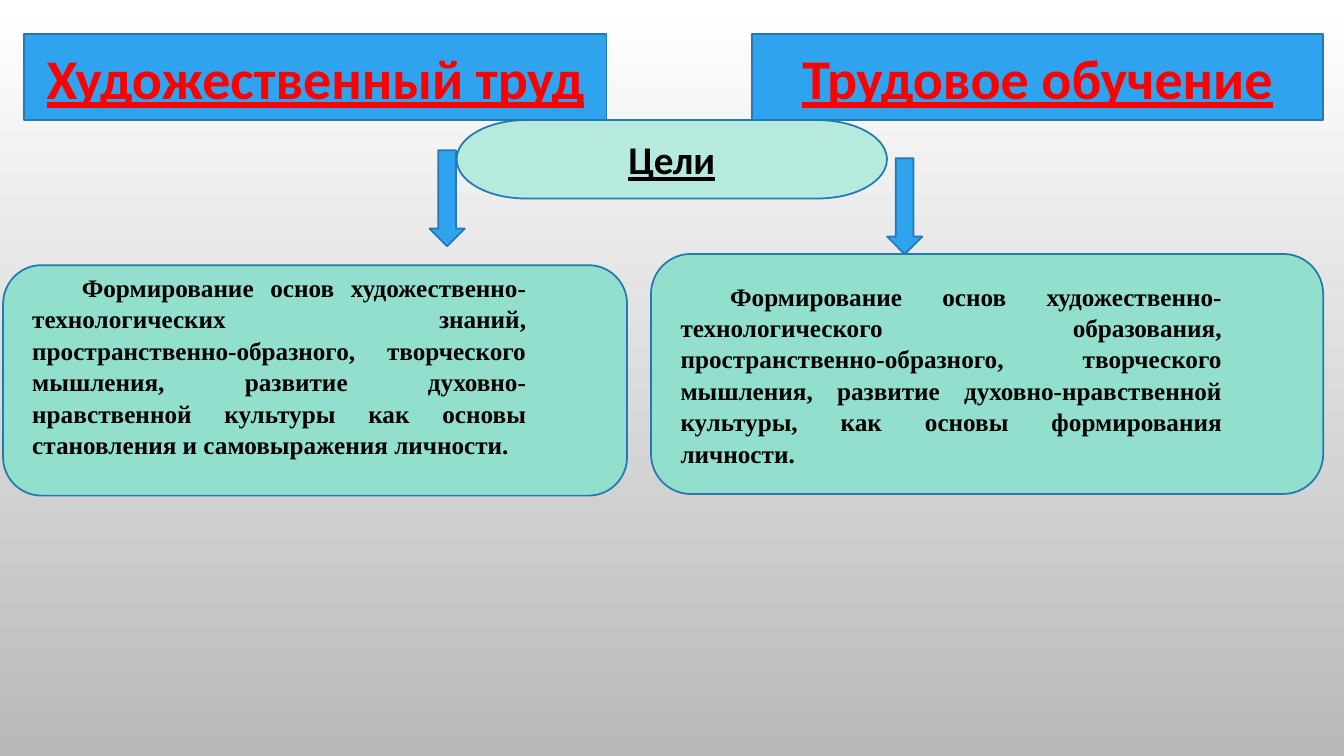
"""Build a slide comparing the goals of two school subjects."""
import pptx
import pptx.dml.color
import pptx.enum.shapes
import pptx.enum.text
import pptx.util

Pt = pptx.util.Pt
Align = pptx.enum.text.PP_ALIGN
Preset = pptx.enum.shapes.MSO_SHAPE


def color(value):
    return pptx.dml.color.RGBColor.from_string(value)


def write(shape, text, size, font="Calibri", ink="000000", underline=True,
          align=Align.CENTER, spacing=1.0, left=0, indent=0,
          right_inset=7.2, bottom_inset=3.6):
    frame = shape.text_frame
    frame.word_wrap = True
    frame.auto_size = pptx.enum.text.MSO_AUTO_SIZE.NONE
    frame.vertical_anchor = pptx.enum.text.MSO_ANCHOR.MIDDLE
    frame.margin_left, frame.margin_right = Pt(7.2), Pt(right_inset)
    frame.margin_top, frame.margin_bottom = Pt(3.6), Pt(bottom_inset)
    paragraph = frame.paragraphs[0]
    paragraph.alignment = align
    paragraph.line_spacing = spacing
    paragraph.space_before = Pt(0)
    properties = paragraph._p.get_or_add_pPr()
    properties.set("marL", str(Pt(left)))
    properties.set("indent", str(Pt(indent)))
    run = paragraph.add_run()
    run.text = text
    run.font.name = font
    run.font.size = Pt(size)
    run.font.bold = True
    run.font.underline = underline
    run.font.color.rgb = color(ink)


class GoalsSlide:
    blue, mint, pale, outline = "2FA3EE", "93DFCE", "B7EADE", "2379B0"

    def __init__(self, presentation):
        self.slide = presentation.slides.add_slide(presentation.slide_layouts[5])

    def background(self, top, bottom):
        fill = self.slide.background.fill
        fill.gradient()
        fill.gradient_angle = 270
        for stop, value, position in zip(fill.gradient_stops, (top, bottom), (0, 1)):
            stop.color.rgb = color(value)
            stop.position = position

    def paint(self, shape, fill):
        shape.fill.solid()
        shape.fill.fore_color.rgb = color(fill)
        shape.line.color.rgb = color(self.outline)
        shape.line.width = Pt(1.25)

    def block(self, preset, fill, left, top, width, height):
        shape = self.slide.shapes.add_shape(
            preset, Pt(left), Pt(top), Pt(width), Pt(height))
        shape.shadow.inherit = False
        self.paint(shape, fill)
        return shape

    def title(self, text, left, top, width, height):
        shape = self.slide.shapes.title
        shape.left, shape.top = Pt(left), Pt(top)
        shape.width, shape.height = Pt(width), Pt(height)
        self.paint(shape, self.blue)
        write(shape, text, 40, ink="FF0000")

    def heading(self, text, left, top, width, height):
        shape = self.block(Preset.RECTANGLE, self.blue, left, top, width, height)
        write(shape, text, 40, ink="FF0000")

    def topic(self, text, left, top, width, height):
        shape = self.block(Preset.FLOWCHART_TERMINATOR, self.pale,
                           left, top, width, height)
        write(shape, text, 28)

    def arrow(self, left, top):
        self.block(Preset.DOWN_ARROW, self.blue, left, top, 25.2, 68.6)

    def goal(self, text, left, top, width, height, bottom_inset=3.6):
        shape = self.block(Preset.ROUNDED_RECTANGLE, self.mint,
                           left, top, width, height)
        write(shape, text, 18, font="Times New Roman", underline=False,
              align=Align.JUSTIFY, spacing=1.04, left=5.7, indent=35.4,
              right_inset=64, bottom_inset=bottom_inset)


def main():
    presentation = pptx.Presentation()
    presentation.slide_width, presentation.slide_height = Pt(960), Pt(540)
    goals = GoalsSlide(presentation)
    goals.background("FFFFFF", "B9B9B9")
    goals.title("Художественный труд", 17.3, 24.3, 416, 61.6)
    goals.heading("Трудовое обучение", 537, 24.3, 408.2, 61.6)
    goals.topic("Цели", 326.2, 85.8, 307.4, 56)
    goals.arrow(306.8, 107.3)
    goals.arrow(633.6, 113)
    goals.goal("Формирование основ художественно- технологического образования, "
               "пространственно-образного, творческого мышления, развитие "
               "духовно-нравственной культуры, как основы формирования личности.",
               465, 181.4, 480.2, 171.5)
    goals.goal("Формирование основ художественно-технологических знаний, "
               "пространственно-образного, творческого мышления, развитие "
               "духовно-нравственной культуры как основы становления и "
               "самовыражения личности.",
               2.2, 189.4, 445.7, 164.6, bottom_inset=25)
    presentation.save("out.pptx")


if __name__ == "__main__":
    main()
